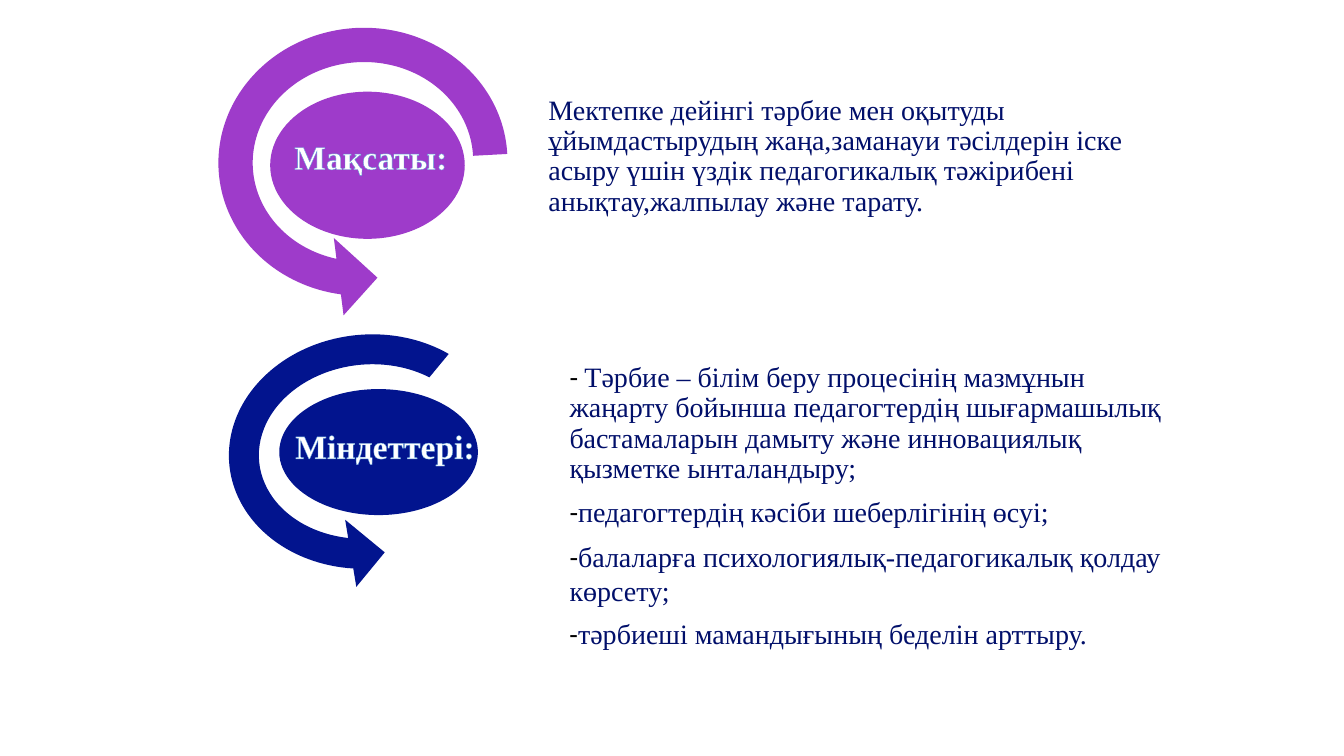
"""Builds a slide that pairs a goal and its tasks with circular arrows."""
from dataclasses import dataclass

from lxml import etree
from pptx import Presentation, oxml, util as u
from pptx.dml.color import RGBColor
from pptx.enum import dml, shapes, text


@dataclass(frozen=True)
class Theme:
    """Colours, fonts and type sizes of the slide."""
    purple: str = "9E3BCA"
    blue: str = "02148E"
    body: str = "010F6A"
    dash: str = "000000"
    pattern: str = "9DC3E6"
    paper: str = "FFFFFF"
    outline: str = "5B9BD5"
    serif: str = "Times New Roman"
    sans: str = "Calibri"
    label_size: int = 24
    body_size: int = 20


THEME = Theme()


def rgb(value):
    """Turns a hex string into a colour."""
    return RGBColor.from_string(value)


def add_solid(slide, kind, box, color):
    """Adds a plain filled shape without line or shadow."""
    shape = slide.shapes.add_shape(kind, *map(u.Inches, box))
    shape.shadow.inherit = False
    shape.fill.solid()
    shape.fill.fore_color.rgb = rgb(color)
    shape.line.fill.background()
    return shape


def add_arrow(slide, kind, box, color, rotation, start, end, flipped=False):
    """Adds a rotated circular arrow."""
    arrow = add_solid(slide, kind, box, color)
    for index, value in enumerate((0.11, 11.423, end, start, 0.125)):
        arrow.adjustments[index] = value
    arrow.rotation = rotation
    if flipped:
        arrow._element.spPr.xfrm.set("flipH", "1")


def add_label(slide, box, words):
    """Adds a bold outlined label with a patterned fill."""
    shape = slide.shapes.add_textbox(*map(u.Inches, box))
    frame = shape.text_frame
    frame.word_wrap = True
    frame.text = words
    run = frame.paragraphs[0].runs[0]
    font = run.font
    font.name, font.size, font.bold = THEME.serif, u.Pt(THEME.label_size), True
    font.fill.patterned()
    font.fill.pattern = dml.MSO_PATTERN.LIGHT_DOWNWARD_DIAGONAL
    font.fill.fore_color.rgb = rgb(THEME.pattern)
    font.fill.back_color.rgb = rgb(THEME.paper)
    line = etree.Element(oxml.ns.qn("a:ln"), w=str(u.Pt(1)))
    fill = etree.SubElement(line, oxml.ns.qn("a:solidFill"))
    etree.SubElement(fill, oxml.ns.qn("a:srgbClr"), val=THEME.outline)
    run._r.get_or_add_rPr().insert(0, line)


def add_body(slide, box, words, dash="", spacing=None, raised=0, wrap=True):
    """Adds body text with an optional dash, raised by a larger bottom inset."""
    shape = slide.shapes.add_textbox(*map(u.Inches, box))
    frame = shape.text_frame
    frame.word_wrap = wrap
    frame.vertical_anchor = text.MSO_ANCHOR.MIDDLE
    frame.margin_bottom = u.Inches(0.05 + raised)
    paragraph = frame.paragraphs[0]
    paragraph.line_spacing = spacing
    parts = ((dash, THEME.sans, THEME.dash), (words, THEME.serif, THEME.body))
    for content, name, color in parts:
        if content:
            run = paragraph.add_run()
            run.text = content
            run.font.name, run.font.size = name, u.Pt(THEME.body_size)
            run.font.color.rgb = rgb(color)


def main():
    """Builds and saves the slide."""
    presentation = Presentation()
    presentation.slide_width = u.Inches(13.33)
    presentation.slide_height = u.Inches(7.5)
    slide = presentation.slides.add_slide(presentation.slide_layouts[6])
    kinds = shapes.MSO_SHAPE

    add_arrow(slide, kinds.LEFT_CIRCULAR_ARROW, (2.08, 3.13, 3.14, 2.7),
              THEME.blue, 354.6, start=189, end=63)
    add_solid(slide, kinds.OVAL, (2.77, 3.86, 1.97, 1.25), THEME.blue)
    add_arrow(slide, kinds.CIRCULAR_ARROW, (1.95, 0.06, 3.3, 3.09),
              THEME.purple, 356.9, start=108, end=45, flipped=True)
    add_solid(slide, kinds.OVAL, (2.68, 0.91, 1.93, 1.46), THEME.purple)

    add_label(slide, (2.82, 1.3, 1.97, 0.5), "Мақсаты:")
    add_label(slide, (2.83, 4.17, 2.09, 0.5), "Міндеттері:")

    add_body(slide, (5.34, 1.13, 6.42, 0.85),
             "Мектепке дейінгі тәрбие мен оқытуды ұйымдастырудың "
             "жаңа,заманауи тәсілдерін іске асыру үшін үздік педагогикалық "
             "тәжірибені анықтау,жалпылау және тарату.", spacing=0.9)
    add_body(slide, (5.55, 3.93, 6.35, 0.85),
             "Тәрбие – білім беру процесінің мазмұнын жаңарту бойынша "
             "педагогтердің шығармашылық бастамаларын дамыту және "
             "инновациялық қызметке ынталандыру;",
             dash="- ", spacing=0.9, raised=0.3)
    add_body(slide, (5.55, 4.82, 6.35, 0.85),
             "педагогтердің кәсіби шеберлігінің өсуі;",
             dash="-", spacing=0.9, raised=0.3)
    add_body(slide, (5.55, 5.43, 6.35, 0.85),
             "балаларға психологиялық-педагогикалық қолдау көрсету;",
             dash="-", raised=0.33)
    add_body(slide, (5.55, 6.06, 5.34, 0.44),
             "тәрбиеші мамандығының беделін арттыру.", dash="-", wrap=False)

    presentation.save("out.pptx")


if __name__ == "__main__":
    main()
